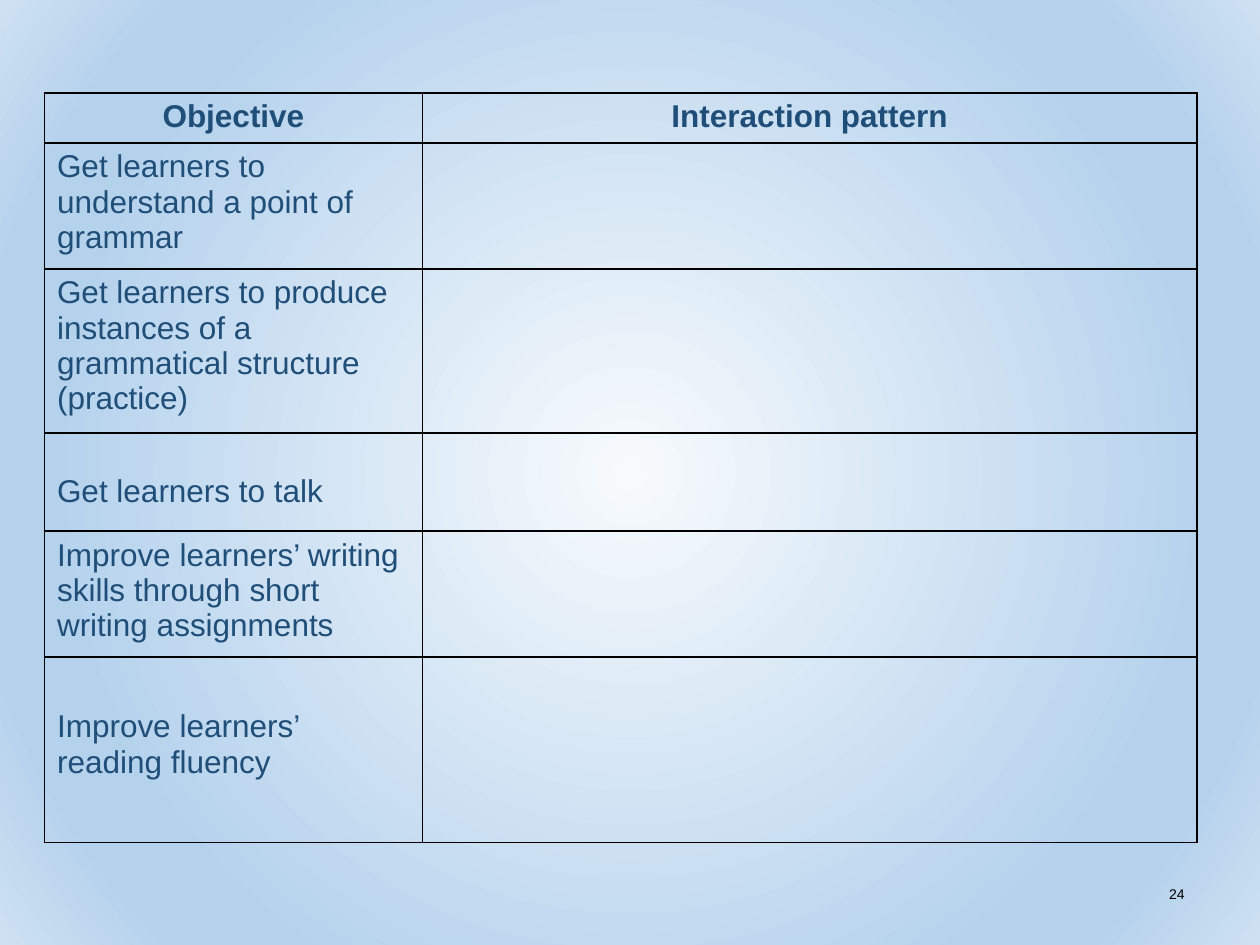
"""Build a slide with a table of learning objectives and interaction patterns."""
from dataclasses import dataclass

import pptx
import pptx.dml.color
import pptx.enum.text
import pptx.oxml
import pptx.oxml.ns
import pptx.util

Pt = pptx.util.Pt
RGB = pptx.dml.color.RGBColor
Align = pptx.enum.text.PP_ALIGN
Anchor = pptx.enum.text.MSO_ANCHOR

BLUE = RGB(0x1F, 0x4E, 0x79)
BLACK = RGB(0, 0, 0)
PALE = RGB(0xF7, 0xFA, 0xFD)
SKY = RGB(0xB5, 0xD2, 0xEC)
MIST = RGB(0xCE, 0xE1, 0xF2)
STOPS = ((0, PALE), (74, SKY), (83, SKY), (100, MIST))
NS = pptx.oxml.ns.nsdecls("a")
WIDTHS = (216, 442.5)
PAD = 3.6


@dataclass
class Row:
    high: float
    texts: tuple[str, str]
    drop: float = 0
    head: bool = False


ROWS = (
    Row(28.6, ("Objective", "Interaction pattern"), head=True),
    Row(72, ("Get learners to understand a point of grammar", "")),
    Row(93.6, ("Get learners to produce instances of a grammatical structure (practice)", "")),
    Row(56.2, ("Get learners to talk", ""), drop=20.1),
    Row(72, ("Improve learners’ writing skills through short writing assignments", "")),
    Row(105.8, ("Improve learners’ reading fluency", ""), drop=26.1),
)


def write(frame, text: str, *, size: float = 18, color: RGB = BLUE, bold: bool = False,
          align: Align = Align.LEFT, before: float = 0, after: float = 0) -> None:
    para = frame.paragraphs[0]
    para.alignment = align
    para.space_before, para.space_after = Pt(before), Pt(after)
    run = para.add_run()
    run.text = text
    run.font.name, run.font.size, run.font.bold = "Arial", Pt(size), bold
    run.font.color.rgb = color


def shade(slide) -> None:
    slide.background.fill.gradient()
    old = slide.element.find(".//" + pptx.oxml.ns.qn("a:gradFill"))
    stops = "".join(f'<a:gs pos="{at * 1000}"><a:srgbClr val="{tone}"/></a:gs>'
                    for at, tone in STOPS)
    new = pptx.oxml.parse_xml(
        f'<a:gradFill {NS} rotWithShape="1"><a:gsLst>{stops}</a:gsLst><a:path path="circle">'
        '<a:fillToRect l="50000" t="50000" r="50000" b="50000"/></a:path></a:gradFill>')
    old.getparent().replace(old, new)


def edge(cell) -> None:
    props = cell._tc.get_or_add_tcPr()
    for spot, side in enumerate("LRTB"):
        props.insert(spot, pptx.oxml.parse_xml(
            f'<a:ln{side} {NS} w="{Pt(1)}"><a:solidFill><a:srgbClr val="{BLACK}"/>'
            f'</a:solidFill></a:ln{side}>'))


def fill(cell, row: Row, text: str) -> None:
    cell.fill.background()
    cell.margin_left = cell.margin_right = Pt(7.2)
    cell.margin_top, cell.margin_bottom = Pt(PAD + row.drop), Pt(PAD)
    edge(cell)
    if text:
        write(cell.text_frame, text, bold=row.head, after=6,
              before=6 if row.head else 0,
              align=Align.CENTER if row.head else Align.LEFT)


def grid(slide) -> None:
    high = sum(row.high for row in ROWS)
    table = slide.shapes.add_table(len(ROWS), len(WIDTHS), Pt(25.4), Pt(53.2),
                                   Pt(sum(WIDTHS)), Pt(high)).table
    table.first_row = table.horz_banding = False
    for col, wide in zip(table.columns, WIDTHS):
        col.width = Pt(wide)
    for line, row in zip(table.rows, ROWS):
        line.height = Pt(row.high)
        for cell, text in zip(line.cells, row.texts):
            fill(cell, row, text)


def number(slide) -> None:
    frame = slide.shapes.add_textbox(Pt(516), Pt(492), Pt(168), Pt(37.5)).text_frame
    frame.word_wrap = True
    frame.vertical_anchor = Anchor.MIDDLE
    write(frame, "24", size=8, color=BLACK, align=Align.RIGHT)


def main() -> None:
    deck = pptx.Presentation()
    deck.slide_width, deck.slide_height = Pt(720), Pt(540)
    slide = deck.slides.add_slide(deck.slide_layouts[6])
    shade(slide)
    grid(slide)
    number(slide)
    deck.save("out.pptx")


if __name__ == "__main__":
    main()
